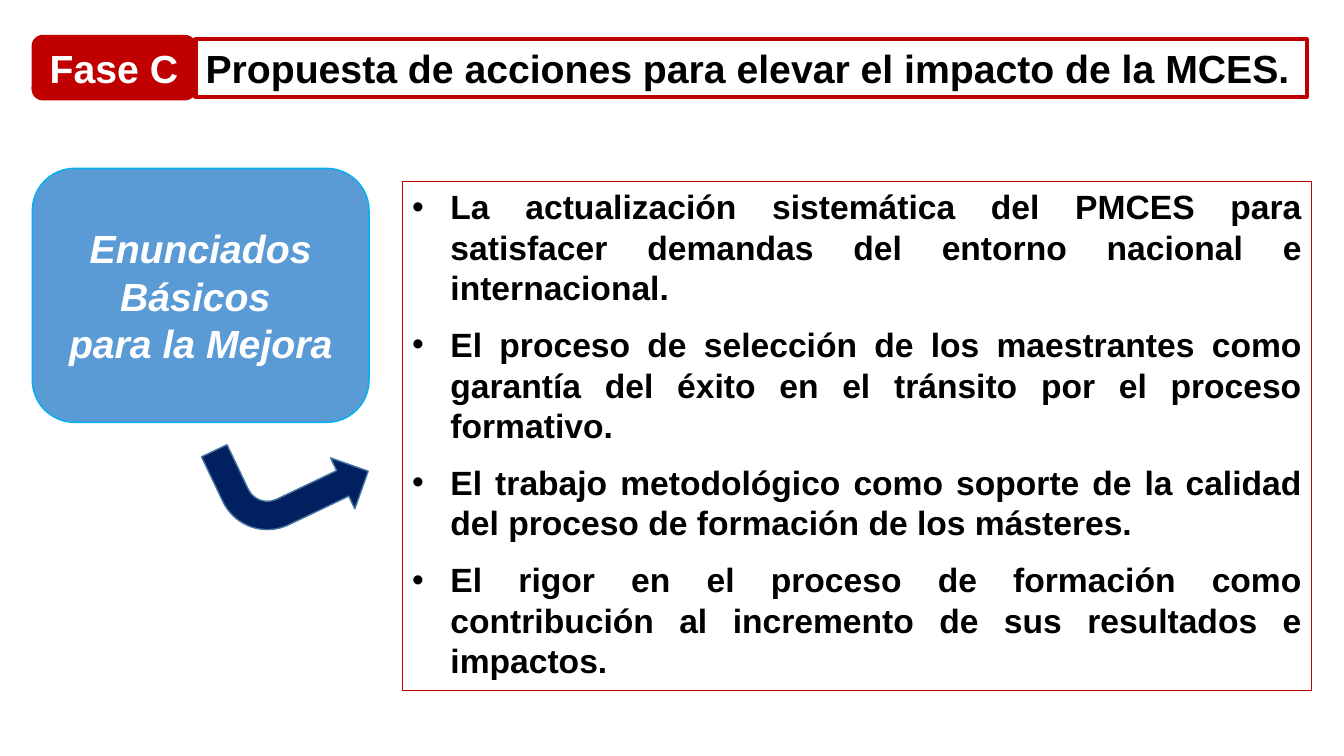
"""Builds the slide on phase C: proposed actions to raise the impact of the MCES."""
from lxml import etree
from pptx import Presentation
from pptx.dml.color import RGBColor
from pptx.enum import shapes, text
from pptx.oxml import ns
from pptx.util import Emu, Inches, Pt

WIDE, HIGH = Inches(13.33), Inches(7.5)
LEFT = 0.024
HUES = {"red": "C00000", "blue": "5B9BD5", "sky": "00B0F0", "navy": "002060",
        "steel": "43739E", "white": "FFFFFF", "black": "000000"}
POINTS = [
    "La actualización sistemática del PMCES para satisfacer demandas del entorno nacional e internacional.",
    "El proceso de selección de los maestrantes como garantía del éxito en el tránsito por el proceso formativo.",
    "El trabajo metodológico como soporte de la calidad del proceso de formación de los másteres.",
    "El rigor en el proceso de formación como contribución al incremento de sus resultados e impactos.",
]


def hue(name):
    """Return the named colour."""
    return RGBColor.from_string(HUES[name])


def place(left, top, width, height):
    """Turn shares of the slide into lengths."""
    return [Emu(round(share * side)) for share, side in
            zip((left, top, width, height), (WIDE, HIGH, WIDE, HIGH))]


def paint(shape, fill, line, weight):
    """Set the fill and outline of a shape."""
    if fill:
        shape.fill.solid()
        shape.fill.fore_color.rgb = hue(fill)
    else:
        shape.fill.background()
    shape.line.color.rgb = hue(line)
    shape.line.width = Pt(weight)


def draw(slide, kind, box, fill, line, weight=1):
    """Add a painted preset shape without shadow."""
    shape = slide.shapes.add_shape(kind, *place(*box))
    shape.shadow.inherit = False
    paint(shape, fill, line, weight)
    return shape


def write(shape, words, size, color, align, anchor, italic=False):
    """Fill a shape with bold text and format its runs."""
    frame = shape.text_frame
    frame.text = words
    frame.word_wrap = True
    frame.auto_size = text.MSO_AUTO_SIZE.NONE
    frame.vertical_anchor = anchor
    for para in frame.paragraphs:
        para.alignment = align
        for run in para.runs:
            font = run.font
            font.name, font.size = "Arial", Pt(size)
            font.bold, font.italic = True, italic
            font.color.rgb = hue(color)


def bullet(para, indent):
    """Give a paragraph a round bullet with a hanging indent."""
    props = para._p.get_or_add_pPr()
    props.set("marL", str(indent))
    props.set("indent", str(-indent))
    etree.SubElement(props, ns.qn("a:buFont")).set("typeface", "Arial")
    etree.SubElement(props, ns.qn("a:buChar")).set("char", "•")


def head(slide):
    """Add the phase badge and the title bar beside it."""
    badge = draw(slide, shapes.MSO_SHAPE.ROUNDED_RECTANGLE,
                 (LEFT, 0.047, 0.1215, 0.085), "red", "red")
    write(badge, "Fase C", 28, "white", text.PP_ALIGN.CENTER, text.MSO_ANCHOR.MIDDLE)
    title = slide.shapes.title
    title.left, title.top, title.width, title.height = place(0.1455, 0.052, 0.8267, 0.076)
    paint(title, None, "red", 3)
    write(title, "Propuesta de acciones para elevar el impacto de la MCES.",
          28, "black", text.PP_ALIGN.LEFT, text.MSO_ANCHOR.TOP)
    badge.element.addnext(title.element)


def topic(slide):
    """Add the topic card and the arrow that leads to the list."""
    card = draw(slide, shapes.MSO_SHAPE.ROUNDED_RECTANGLE,
                (LEFT, 0.2227, 0.2506, 0.336), "blue", "sky")
    write(card, "Enunciados Básicos \npara la Mejora", 28, "white",
          text.PP_ALIGN.CENTER, text.MSO_ANCHOR.MIDDLE, italic=True)
    arrow = draw(slide, shapes.MSO_SHAPE.BENT_ARROW,
                 (0.1628, 0.556, 0.1073, 0.1493), "navy", "steel")
    arrow.rotation = 154.5
    arrow.element.spPr.find(ns.qn("a:xfrm")).set("flipH", "1")


def points(slide):
    """Add the framed list of statements."""
    frame = draw(slide, shapes.MSO_SHAPE.RECTANGLE,
                 (0.2993, 0.24, 0.6767, 0.6733), None, "red", 0.75)
    write(frame, "\n".join(POINTS), 24, "black",
          text.PP_ALIGN.JUSTIFY, text.MSO_ANCHOR.TOP)
    paras = frame.text_frame.paragraphs
    for para in paras:
        para.space_after = Pt(0 if para is paras[-1] else 12)
        bullet(para, Inches(0.38))


def main():
    """Build and save the slide."""
    deck = Presentation()
    deck.slide_width, deck.slide_height = WIDE, HIGH
    slide = deck.slides.add_slide(deck.slide_layouts[5])
    points(slide)
    topic(slide)
    head(slide)
    deck.save("out.pptx")


if __name__ == "__main__":
    main()
